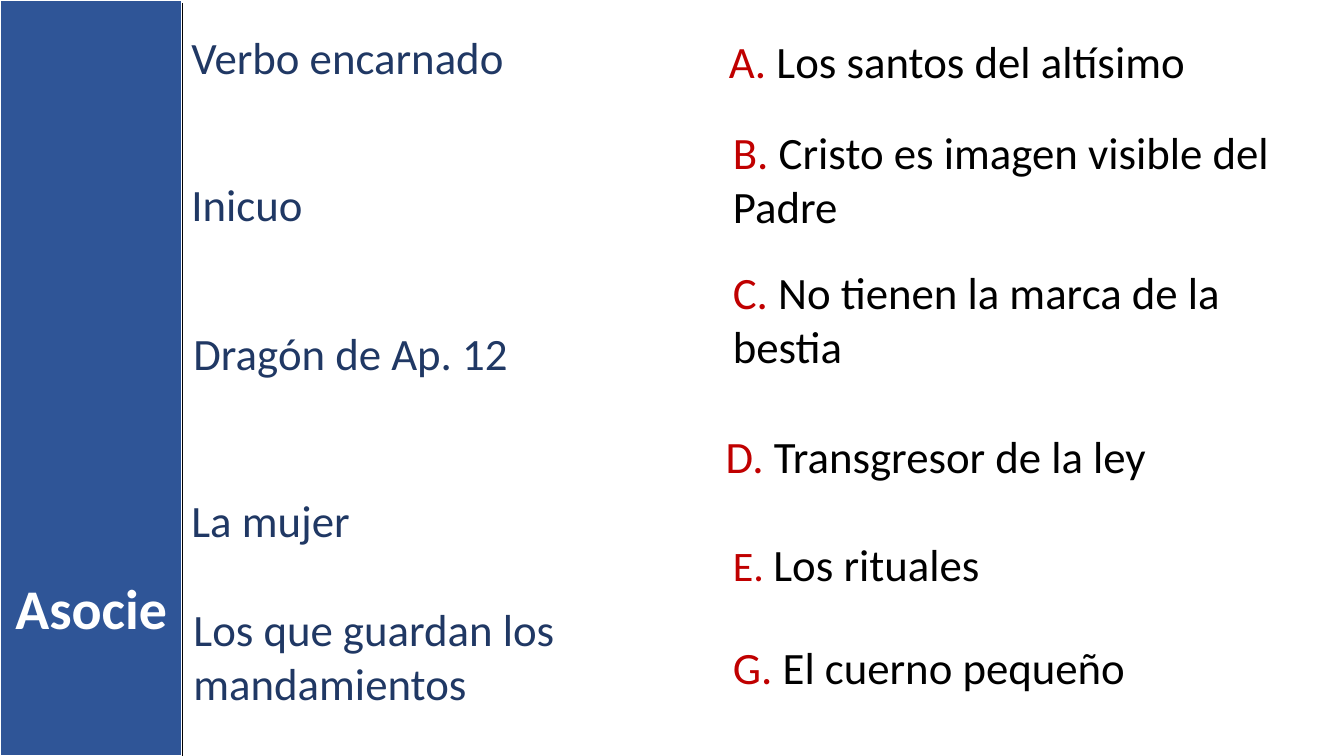
from dataclasses import dataclass

from lxml.etree import SubElement
from pptx import Presentation
from pptx.dml.color import RGBColor as Rgb
from pptx.enum.shapes import MSO_CONNECTOR as Connector, MSO_SHAPE as Shape
from pptx.enum.text import MSO_ANCHOR as Anchor, MSO_AUTO_SIZE as AutoSize, PP_ALIGN as Align
from pptx.oxml.ns import qn
from pptx.util import Inches, Pt

HEADING = "Asocie"

# text, left, top, width, rows of text (inches)
CONCEPTS = [
    ("Verbo encarnado", 1.8, 0.25, 4.43, 1),
    ("Inicuo", 1.8, 1.7, 4.62, 1),
    ("Dragón de Ap. 12", 1.82, 3.18, 5.08, 1),
    ("La mujer", 1.8, 4.84, 4.6, 1),
    ("Los que guardan los mandamientos", 1.82, 5.92, 4.41, 2),
]

# letter, text, left, top, width, rows of text (inches)
ANSWERS = [
    ("A", "Los santos del altísimo", 7.13, 0.29, 6.05, 1),
    ("B", "Cristo es imagen visible del Padre", 7.17, 1.19, 5.92, 2),
    ("C", "No tienen la marca de la bestia", 7.17, 2.58, 5.74, 2),
    ("D", "Transgresor de la ley", 7.1, 4.2, 5.8, 1),
    ("E", "Los rituales", 7.17, 5.28, 5.53, 1),
    ("G", "El cuerno pequeño", 7.17, 6.3, 5.59, 1),
]
SMALL_LETTER = "E"

SLIDE_W, SLIDE_H = 13.33, 7.5
SIDEBAR_W = 1.81
HEADING_TOP, HEADING_H = 5.64, 0.77
ROW_H, BOX_PADDING = 0.54, 0.1


@dataclass(frozen=True)
class Theme:
    font: str = "Calibri"
    sidebar: Rgb = Rgb(0x2F, 0x55, 0x97)
    concept: Rgb = Rgb(0x20, 0x38, 0x64)
    letter: Rgb = Rgb(0xC0, 0x00, 0x00)
    ink: Rgb = Rgb(0x00, 0x00, 0x00)
    paper: Rgb = Rgb(0xFF, 0xFF, 0xFF)
    heading_size: Pt = Pt(40)
    body_size: Pt = Pt(32)
    small_size: Pt = Pt(30)


THEME = Theme()


def add_phrase(slide, parts, left, top, width, rows):
    """Add one text box; parts holds (text, colour, size) for each run."""
    height = rows * ROW_H + BOX_PADDING
    box = slide.shapes.add_textbox(*map(Inches, (left, top, width, height)))
    frame = box.text_frame
    frame.word_wrap = True
    frame.auto_size = AutoSize.SHAPE_TO_FIT_TEXT
    phrase = frame.paragraphs[0]
    phrase.font.name = THEME.font
    for text, color, size in parts:
        run = phrase.add_run()
        run.text = text
        run.font.color.rgb = color
        run.font.size = size


def add_sidebar(slide):
    sidebar = slide.shapes.add_shape(Shape.RECTANGLE, 0, 0, Inches(SIDEBAR_W), Inches(SLIDE_H))
    sidebar.shadow.inherit = False
    sidebar.fill.solid()
    sidebar.fill.fore_color.rgb = THEME.sidebar
    sidebar.line.color.rgb = THEME.paper
    sidebar.line.width = Pt(1.5)

    heading = slide.shapes.title
    heading._element.addprevious(sidebar._element)  # the heading lies on the sidebar
    heading.left, heading.top = 0, Inches(HEADING_TOP)
    heading.width, heading.height = Inches(SIDEBAR_W), Inches(HEADING_H)
    frame = heading.text_frame
    frame.text = HEADING
    frame.word_wrap = True
    frame.auto_size = AutoSize.SHAPE_TO_FIT_TEXT
    frame.vertical_anchor = Anchor.TOP
    line = frame.paragraphs[0]
    line.alignment = Align.CENTER
    line.font.name = THEME.font
    line.font.size = THEME.heading_size
    line.font.bold = True
    line.font.color.rgb = THEME.paper


def add_divider(slide):
    divider = slide.shapes.add_connector(
        Connector.STRAIGHT, *map(Inches, (SIDEBAR_W, 0.03, SIDEBAR_W, SLIDE_H)))
    divider.line.color.rgb = THEME.ink
    divider.line.width = Pt(1)
    SubElement(divider._element.spPr, qn("a:effectLst"))


def main():
    deck = Presentation()
    deck.slide_width, deck.slide_height = Inches(SLIDE_W), Inches(SLIDE_H)
    slide = deck.slides.add_slide(deck.slide_layouts.get_by_name("Title Only"))
    add_sidebar(slide)
    for text, *place in CONCEPTS:
        add_phrase(slide, [(text, THEME.concept, THEME.body_size)], *place)
    for letter, text, *place in ANSWERS:
        letter_size = THEME.small_size if letter == SMALL_LETTER else THEME.body_size
        parts = [(f"{letter}. ", THEME.letter, letter_size), (text, THEME.ink, THEME.body_size)]
        add_phrase(slide, parts, *place)
    add_divider(slide)
    deck.save("out.pptx")


if __name__ == "__main__":
    main()
